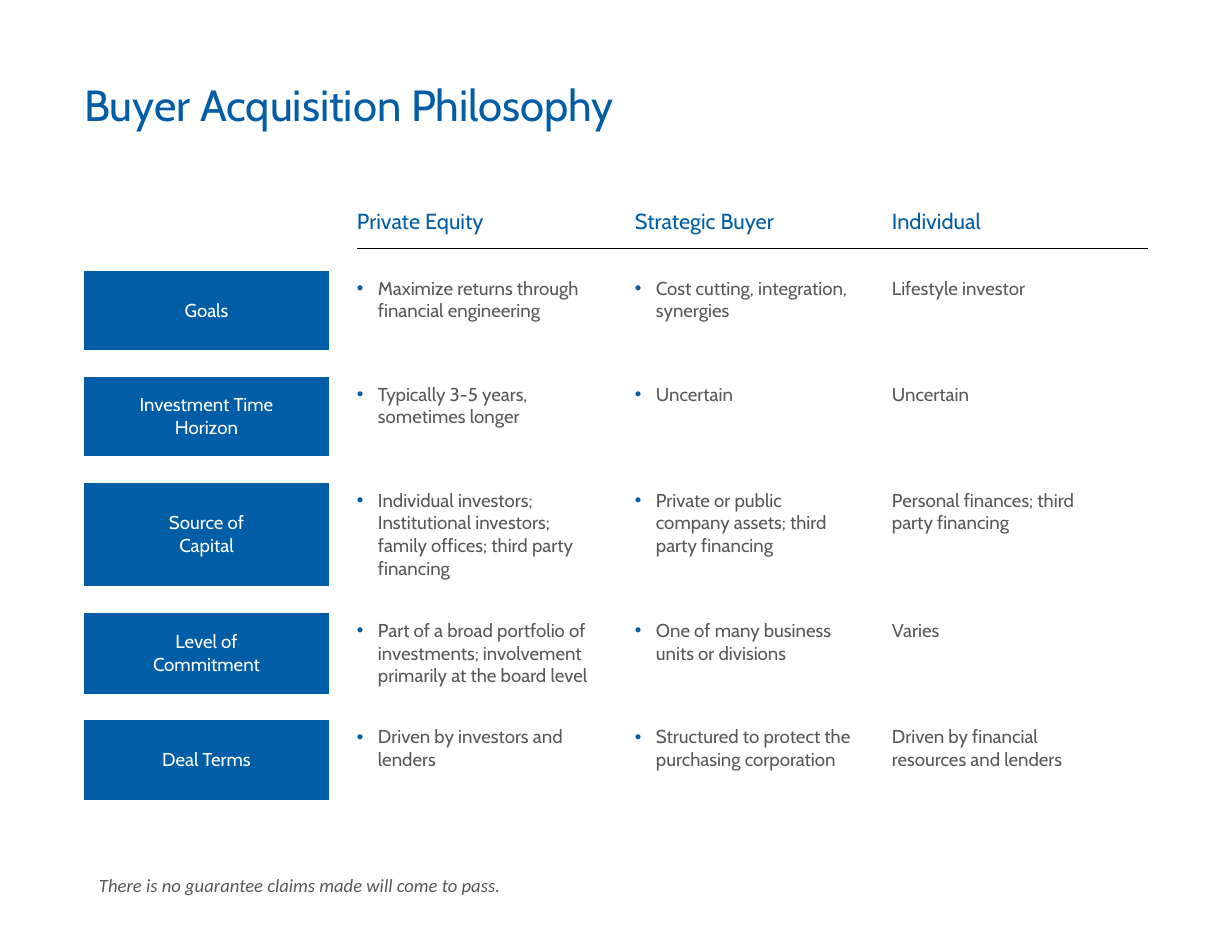
import pptx
import pptx.dml.color
import pptx.enum.text
import pptx.oxml.ns
import pptx.util
from lxml import etree

# Content
TITLE = "Buyer Acquisition Philosophy"
BUYERS = ["Private Equity", "Strategic Buyer", "Individual"]
TOPICS = [
    ("Goals",
     "Maximize returns through financial engineering",
     "Cost cutting, integration, synergies",
     "Lifestyle investor"),
    ("Investment Time\nHorizon",
     "Typically 3-5 years, sometimes longer",
     "Uncertain",
     "Uncertain"),
    ("Source of\nCapital",
     "Individual investors; Institutional investors; family offices; third party financing",
     "Private or public company assets; third party financing",
     "Personal finances; third party financing"),
    ("Level of\nCommitment",
     "Part of a broad portfolio of investments; involvement primarily at the board level",
     "One of many business units or divisions",
     "Varies"),
    ("Deal Terms",
     "Driven by investors and lenders",
     "Structured to protect the purchasing corporation",
     "Driven by financial resources and lenders"),
]
DISCLAIMER = "There is no guarantee claims made will come to pass."

# Layout in px, 112 to the inch
PX = 914400 // 112
PAGE = (1232, 952)
TITLE_BOX = (84, 84, 1064, 47)
TABLE_TOP = (84, 202)
COLUMNS = [245, 28, 278, 257, 256]
HEADER_HEIGHT = 46
GAPS = [23, 27, 27, 27, 26]
TOPIC_HEIGHTS = [79, 79, 102, 80, 80]
DISCLAIMER_BOX = (99, 874, 713, 22)
PAD_Y, PAD_X = 6, 11
BULLETED = BUYERS[:2]

BLUE, GRAY, WHITE, BLACK = "005DA6", "585858", "FFFFFF", "000000"
FONT = "Cabin"
NO_TABLE_STYLE = "{2D5ABB26-0587-4C30-8999-92F81FD0307C}"
ALIGN = pptx.enum.text.PP_ALIGN
ANCHOR = pptx.enum.text.MSO_ANCHOR


def px(length):
    return pptx.util.Emu(length * PX)


def color(code):
    return pptx.dml.color.RGBColor.from_string(code)


def add_child(parent, tag, **attributes):
    child = etree.SubElement(parent, pptx.oxml.ns.qn(tag))
    for name, value in attributes.items():
        child.set(name, str(value))
    return child


def write(para, text, size, code, font=FONT, italic=False):
    for number, line in enumerate(text.split("\n")):
        if number:
            para.add_line_break()
        span = para.add_run()
        span.text = line
        span.font.name = font
        span.font.size = pptx.util.Pt(size)
        span.font.italic = italic
        span.font.color.rgb = color(code)


def set_insets(owner, left, top, right, bottom):
    owner.margin_left, owner.margin_top = px(left), px(top)
    owner.margin_right, owner.margin_bottom = px(right), px(bottom)


def add_bullet(para):
    props = para._p.get_or_add_pPr()
    props.set("marL", str(px(21)))
    props.set("indent", str(-px(21)))
    add_child(add_child(props, "a:buClr"), "a:srgbClr", val=BLUE)
    add_child(props, "a:buFont", typeface="Arial")
    add_child(props, "a:buChar", char="•")


def underline(cell):
    line = etree.Element(pptx.oxml.ns.qn("a:lnB"), w=str(pptx.util.Pt(0.5)))
    add_child(add_child(line, "a:solidFill"), "a:srgbClr", val=BLACK)
    cell._tc.get_or_add_tcPr().insert(0, line)


deck = pptx.Presentation()
deck.slide_width, deck.slide_height = map(px, PAGE)
page = deck.slides.add_slide(deck.slide_layouts[5])

# Title
title = page.shapes.title
title.left, title.top, title.width, title.height = map(px, TITLE_BOX)
frame = title.text_frame
frame.auto_size = pptx.enum.text.MSO_AUTO_SIZE.NONE
frame.word_wrap = True
frame.vertical_anchor = ANCHOR.MIDDLE
set_insets(frame, 0, 0, 0, 0)
para = frame.paragraphs[0]
para.alignment = ALIGN.LEFT
para.line_spacing = 0.9
write(para, TITLE, 28, BLUE)

# Table grid: a header, then a gap row and a topic row for each topic
heights = [HEADER_HEIGHT]
for gap, height in zip(GAPS, TOPIC_HEIGHTS):
    heights += [gap, height]
holder = page.shapes.add_table(
    len(heights), len(COLUMNS), *map(px, TABLE_TOP), px(sum(COLUMNS)), px(sum(heights)))
table = holder.table
table.first_row = table.horz_banding = False
table._tbl.tblPr.find(pptx.oxml.ns.qn("a:tableStyleId")).text = NO_TABLE_STYLE
for column, width in zip(table.columns, COLUMNS):
    column.width = px(width)
for row, height in zip(table.rows, heights):
    row.height = px(height)

# Header row
for column, buyer in enumerate(BUYERS, start=2):
    cell = table.cell(0, column)
    set_insets(cell, 0, PAD_Y, PAD_X, PAD_Y)
    write(cell.text_frame.paragraphs[0], buyer, 14, BLUE)
    underline(cell)

# Topic rows
for number, (topic, *answers) in enumerate(TOPICS):
    row = 2 + 2 * number
    label = table.cell(row, 0)
    label.vertical_anchor = ANCHOR.MIDDLE
    set_insets(label, PAD_X, PAD_Y, PAD_X, PAD_Y)
    para = label.text_frame.paragraphs[0]
    para.alignment = ALIGN.CENTER
    write(para, topic, 12, WHITE)
    for column, (buyer, answer) in enumerate(zip(BUYERS, answers), start=2):
        cell = table.cell(row, column)
        set_insets(cell, 0, PAD_Y, 34, PAD_Y)
        para = cell.text_frame.paragraphs[0]
        if buyer in BULLETED:
            add_bullet(para)
        write(para, answer, 12, GRAY)

# Fills, and small type in empty cells so that the gap rows stay low
for cell in table.iter_cells():
    if not cell.text_frame.text:
        set_insets(cell, 0, 0, 0, 0)
        add_child(cell.text_frame.paragraphs[0]._p, "a:endParaRPr", sz=400)
    cell.fill.background()
for row in range(2, len(heights), 2):
    fill = table.cell(row, 0).fill
    fill.solid()
    fill.fore_color.rgb = color(BLUE)

# Disclaimer
box = page.shapes.add_textbox(*map(px, DISCLAIMER_BOX))
frame = box.text_frame
frame.word_wrap = True
frame.auto_size = pptx.enum.text.MSO_AUTO_SIZE.SHAPE_TO_FIT_TEXT
set_insets(frame, 0, 0, 0, 0)
write(frame.paragraphs[0], DISCLAIMER, 12, GRAY, "Calibri", italic=True)

deck.save("out.pptx")
